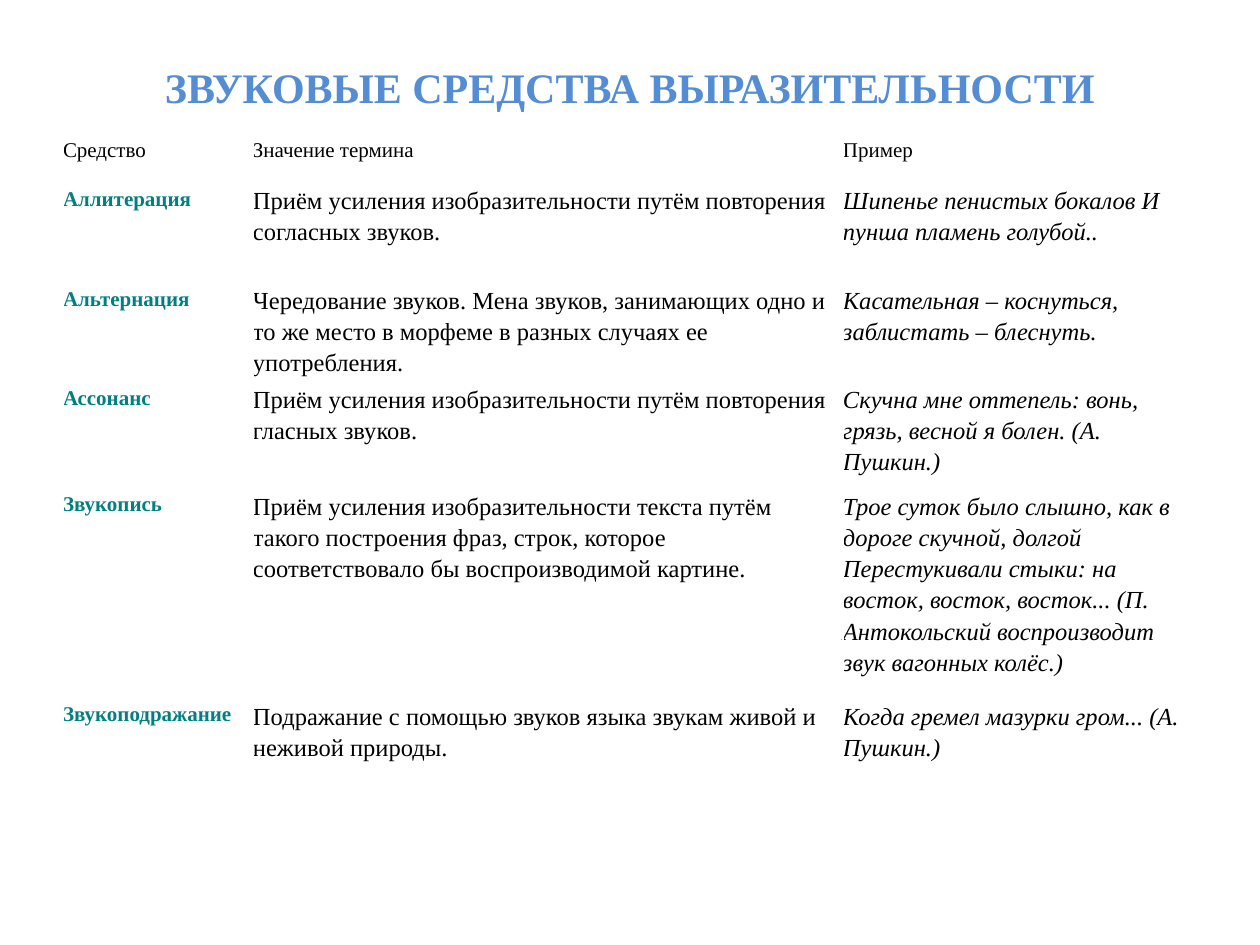
from pptx import Presentation
from pptx import util as u
from pptx.dml import color
from pptx.enum import text

FONT = "Times New Roman"
BLUE, TEAL, BLACK = "548DD4", "008080", "000000"

TITLE = "ЗВУКОВЫЕ СРЕДСТВА ВЫРАЗИТЕЛЬНОСТИ"
HEADER = ("Средство", "Значение термина", "Пример")
DEVICES = [
    ("Аллитерация",
     "Приём усиления изобразительности путём повторения согласных звуков.",
     "Шипенье пенистых бокалов И пунша пламень голубой.."),
    ("Альтернация",
     "Чередование звуков. Мена звуков, занимающих одно и то же место в морфеме "
     "в разных случаях ее употребления.",
     "Касательная – коснуться, заблистать – блеснуть."),
    ("Ассонанс",
     "Приём усиления изобразительности путём повторения гласных звуков.",
     "Скучна мне оттепель: вонь, грязь, весной я болен. (А. Пушкин.)"),
    ("Звукопись",
     "Приём усиления изобразительности текста путём такого построения фраз, строк, "
     "которое соответствовало бы воспроизводимой картине.",
     "Трое суток было слышно, как в дороге скучной, долгой Перестукивали стыки: "
     "на восток, восток, восток... (П. Антокольский воспроизводит звук вагонных колёс.)"),
    ("Звукоподражание",
     "Подражание с помощью звуков языка звукам живой и неживой природы.",
     "Когда гремел мазурки гром... (А. Пушкин.)"),
]
COLUMN_WIDTHS = (190, 590, 354)
ROW_HEIGHTS = (49, 100, 99, 107, 210, 89)

# Size, colour, bold, italic
HEADER_STYLE = (12, BLACK, False, False)
COLUMN_STYLES = (
    (12, TEAL, True, False),
    (14, BLACK, False, False),
    (14, BLACK, False, True),
)


def px(length):
    return u.Emu(round(length * 914400 / 126))


def rgb(value):
    return color.RGBColor.from_string(value)


def format_runs(para, size, colour, bold, italic):
    for span in para.runs:
        span.font.name = FONT
        span.font.size = u.Pt(size)
        span.font.color.rgb = rgb(colour)
        span.font.bold = bold
        span.font.italic = italic


def add_title(page, box):
    title = page.shapes.title
    title.left, title.top, title.width, title.height = map(px, box)
    frame = title.text_frame
    frame.text = TITLE
    frame.vertical_anchor = text.MSO_ANCHOR.MIDDLE
    para = frame.paragraphs[0]
    para.alignment = text.PP_ALIGN.CENTER
    format_runs(para, 24, BLUE, True, False)


def fill_cell(cell, words, style):
    cell.fill.background()
    cell.margin_left = cell.margin_right = cell.margin_top = cell.margin_bottom = 0
    cell.text_frame.text = words
    para = cell.text_frame.paragraphs[0]
    para.line_spacing = 1.15
    format_runs(para, *style)


def add_device_table(page, left, top):
    rows = [HEADER] + DEVICES
    table = page.shapes.add_table(
        len(rows), len(HEADER), px(left), px(top),
        px(sum(COLUMN_WIDTHS)), px(sum(ROW_HEIGHTS))).table
    table.first_row = table.horz_banding = False
    for column, width in zip(table.columns, COLUMN_WIDTHS):
        column.width = px(width)
    for row, height in zip(table.rows, ROW_HEIGHTS):
        row.height = px(height)

    for r, row in enumerate(rows):
        for c, words in enumerate(row):
            fill_cell(table.cell(r, c), words, COLUMN_STYLES[c] if r else HEADER_STYLE)


def main():
    deck = Presentation()
    deck.slide_width, deck.slide_height = px(1260), px(945)
    page = deck.slides.add_slide(deck.slide_layouts[5])  # Title Only
    add_title(page, (63, 38, 1134, 97))
    add_device_table(page, 63, 135)
    deck.save("out.pptx")


if __name__ == "__main__":
    main()
